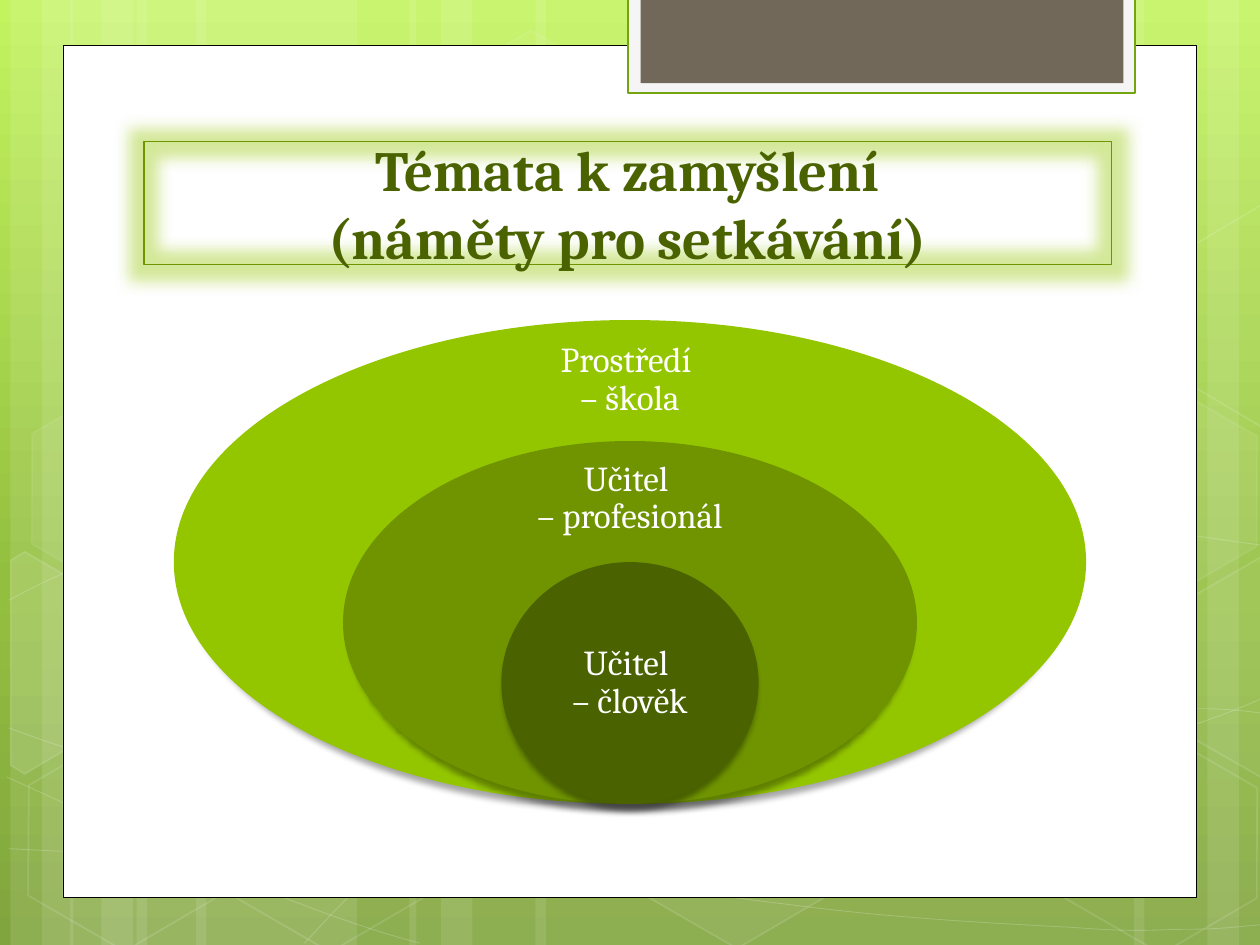
import math
from copy import deepcopy

from lxml import etree
from pptx import Presentation
from pptx.dml.color import RGBColor
from pptx.enum.shapes import MSO_SHAPE
from pptx.enum.text import MSO_ANCHOR, MSO_AUTO_SIZE, PP_ALIGN
from pptx.oxml.ns import qn
from pptx.util import Pt

RECT, HEXAGON = MSO_SHAPE.RECTANGLE, MSO_SHAPE.HEXAGON
MIDDLE, CENTER = MSO_ANCHOR.MIDDLE, PP_ALIGN.CENTER
NO_AUTOFIT = MSO_AUTO_SIZE.NONE

WHITE = RGBColor(0xFF, 0xFF, 0xFF)
BLACK = RGBColor(0x00, 0x00, 0x00)
LIME = RGBColor(0x94, 0xC6, 0x00)
GREEN = RGBColor(0x6F, 0x94, 0x00)
DARK_GREEN = RGBColor(0x4A, 0x63, 0x00)
TAB_EDGE = RGBColor(0x74, 0xA5, 0x10)
TAB_LIGHT = RGBColor(0xF5, 0xF5, 0xF5)
TAB_BROWN = RGBColor(0x71, 0x68, 0x5A)
BACKDROP = [
    (0, RGBColor(0xC3, 0xF3, 0x5F)),
    (0.62, RGBColor(0x93, 0xBF, 0x3F)),
    (1, RGBColor(0x81, 0xA5, 0x3E)),
]

FONT = "Cambria"
SLIDE_W, SLIDE_H = 720, 540
TILT = 30

# (left, width) of the pale vertical bands
BANDS = [(78, 126), (6, 36), (24, 60), (112, 126), (40, 36), (58, 60),
         (528, 126), (690, 36), (648, 60), (306, 222), (234, 36), (252, 60)]

# Start point, then two control points and an end point for each segment
CURVES = [
    [(5, 485), (44, 487), (83, 489), (137, 488), (191, 487), (258, 486), (330, 479),
     (402, 472), (504, 458), (570, 444), (636, 431), (703, 409), (725, 397)],
    [(5, 343), (26, 332), (47, 321), (87, 310), (128, 299), (186, 284), (250, 279),
     (314, 274), (392, 273), (471, 279), (550, 284), (682, 307), (725, 312)],
    [(4, 444), (91, 484), (178, 523), (240, 539)],
    [(5, 416), (27, 424), (50, 432), (92, 444), (134, 454), (197, 472), (257, 485),
     (317, 497), (392, 510), (452, 517), (512, 525), (576, 528), (614, 530),
     (652, 533), (662, 531), (680, 531), (699, 531), (712, 529), (725, 528)],
    [(174, 539), (187, 525), (200, 510), (217, 498), (235, 485), (259, 470), (279, 460),
     (300, 450), (312, 446), (338, 438), (364, 431), (413, 421), (438, 416),
     (464, 411), (467, 411), (490, 410), (512, 407), (547, 405), (572, 405),
     (597, 404), (638, 405), (638, 405), (654, 405), (670, 405), (686, 405),
     (699, 405), (711, 406), (724, 408)],
]

# (left, top, fill opacity or None, line opacity), in percent
HEXAGONS = [(240.5, 26, 4, 8), (358, 424, 6, 12), (8, 425.5, None, 12),
            (10, 224.5, 7, 8), (125.5, 426, None, 12), (542, 326, 10, 12),
            (600.5, 427, None, 12), (600.5, 226, 7, 8)]

# Hexagons cut by the slide edge: (fill opacity or None, centre, corners as seen)
CUT_HEXAGONS = [
    (10, (26, 385),
     [(6, 320), (14, 315), (69, 347), (68, 410), (14, 442), (6, 437)]),
    (4, (709, 374.5),
     [(667, 349), (721, 318), (726, 321), (726, 441), (721, 444), (667, 413)]),
    (None, (709, 173.5),
     [(667, 149), (721, 117), (727, 121), (726, 241), (721, 244), (667, 212)]),
]

# (text, width, height, fill, side inset, top inset, bottom inset)
LAYERS = [
    ("Prostředí \v– škola", 521.3, 276.5, LIME, 181, 25, 232.5),
    ("Učitel \v– profesionál", 328, 207.4, GREEN, 98.6, 24.5, 166),
    ("Učitel \v– člověk", 147, 138.2, DARK_GREEN, 32.4, 46, 46),
]
LAYERS_BOTTOM = 459.4


def set_alpha(sp, xpath, percent):
    clr = sp.element.spPr.xpath(xpath + "a:solidFill/a:srgbClr")[0]
    etree.SubElement(clr, qn("a:alpha")).set("val", str(percent * 1000))


def paint(sp, fill=None, line=None, width=1, fill_alpha=None, line_alpha=None):
    sp.shadow.inherit = False
    for part, color in ((sp.fill, fill), (sp.line.fill, line)):
        if color is None:
            part.background()
        else:
            part.solid()
            part.fore_color.rgb = color
    if line is not None:
        sp.line.width = Pt(width)
    if fill_alpha:
        set_alpha(sp, "", fill_alpha)
    if line_alpha:
        set_alpha(sp, "a:ln/", line_alpha)


def add_effect(sp, tag, color, alpha, **attrs):
    """Put a glow or shadow into the shape's (empty) effect list."""
    effects = sp.element.spPr.find(qn("a:effectLst"))
    effect = etree.SubElement(effects, qn(tag))
    for name, value in attrs.items():
        effect.set(name, str(value))
    clr = etree.SubElement(effect, qn("a:srgbClr"))
    clr.set("val", str(color))
    etree.SubElement(clr, qn("a:alpha")).set("val", str(alpha * 1000))


def add_block(s, shape, x, y, w, h, **look):
    sp = s.shapes.add_shape(shape, Pt(x), Pt(y), Pt(w), Pt(h))
    paint(sp, **look)
    return sp


def add_outline(s, points, close=True, **look):
    pts = [(Pt(x), Pt(y)) for x, y in points]
    builder = s.shapes.build_freeform(*pts[0])
    builder.add_line_segments(pts[1:], close=close)
    sp = builder.convert_to_shape()
    paint(sp, **look)
    return sp


def add_curve(s, nodes, **look):
    """Add an outline whose every three line segments become one Bézier curve."""
    sp = add_outline(s, nodes, close=False, **look)
    lines = sp.element.spPr.xpath(".//a:path/a:lnTo")
    for i in range(0, len(lines), 3):
        curve = etree.Element(qn("a:cubicBezTo"))
        lines[i].addprevious(curve)
        for line in lines[i:i + 3]:
            curve.append(line[0])
            line.getparent().remove(line)
    return sp


def ellipse_nodes(cx, cy, w, h):
    k = 4 / 3 * math.tan(math.pi / 8)
    unit = [(-1, 0), (-1, -k), (-k, -1), (0, -1), (k, -1), (1, -k), (1, 0),
            (1, k), (k, 1), (0, 1), (-k, 1), (-1, k), (-1, 0)]
    return [(cx + x * w / 2, cy + y * h / 2) for x, y in unit]


def turn_back(points, center):
    """Undo the tilt, so that the shape's own rotation brings it back."""
    cx, cy = center
    cos, sin = math.cos(math.radians(TILT)), math.sin(math.radians(TILT))
    return [(cx + (x - cx) * cos + (y - cy) * sin,
             cy - (x - cx) * sin + (y - cy) * cos) for x, y in points]


def write_text(sp, text, color, size, bold=False, spacing=1.0, **insets):
    tf = sp.text_frame
    tf.text = text
    settings = dict(word_wrap=True, auto_size=NO_AUTOFIT, vertical_anchor=MIDDLE)
    for name, value in settings.items():
        setattr(tf, name, value)
    for side, value in insets.items():
        setattr(tf, "margin_" + side, Pt(value))
    p = tf.paragraphs[0]
    p.alignment, p.line_spacing = CENTER, spacing
    for r in p.runs:
        for name, value in dict(name=FONT, size=Pt(size), bold=bold).items():
            setattr(r.font, name, value)
        r.font.color.rgb = color
    # Line breaks take the run format so that they keep the line height
    for br in p._p.findall(qn("a:br")):
        br.append(deepcopy(p._p.find(qn("a:r")).find(qn("a:rPr"))))


def set_backdrop(s):
    fill = s.background.fill
    fill.gradient()
    fill.gradient_angle = 270
    stops = s.element.xpath(".//p:bgPr//a:gsLst")[0]
    stops.insert(1, deepcopy(stops[0]))
    for stop, (position, color) in zip(fill.gradient_stops, BACKDROP):
        stop.position = position
        stop.color.rgb = color


def add_pattern(s):
    for x, w in BANDS:
        add_block(s, RECT, x, 0, w, SLIDE_H, fill=WHITE, fill_alpha=10)
    for nodes in CURVES:
        add_curve(s, nodes, line=WHITE, width=0.5, line_alpha=20)
    for x, y, fill_alpha, line_alpha in HEXAGONS:
        sp = add_block(s, HEXAGON, x, y, 126, 109.5, fill=WHITE if fill_alpha else None,
                       line=WHITE, fill_alpha=fill_alpha, line_alpha=line_alpha)
        sp.rotation = TILT
        sp.adjustments[0], sp.adjustments[1] = 0.285, 1.155
    for fill_alpha, center, corners in CUT_HEXAGONS:
        sp = add_outline(s, turn_back(corners, center), fill=WHITE if fill_alpha else None,
                         line=WHITE, fill_alpha=fill_alpha, line_alpha=12)
        sp.rotation = TILT


def add_panel(s):
    add_block(s, RECT, 36, 26, 648, 487, fill=WHITE, line=BLACK, width=0.5)
    add_block(s, RECT, 359, -1.5, 289.5, 54.5, fill=TAB_LIGHT, line=TAB_EDGE, width=1.25)
    add_block(s, RECT, 366, -1.5, 276, 49, fill=TAB_BROWN)


def add_title(s, text):
    title = s.shapes.title
    s.shapes.element.append(title.element)  # bring to front
    for name, value in dict(left=82.2, top=81, width=553, height=70).items():
        setattr(title, name, Pt(value))
    paint(title, line=GREEN, width=0.75)
    add_effect(title, "a:glow", LIME, 40, rad=Pt(18))
    write_text(title, text, DARK_GREEN, 32.4, bold=True)


def add_layer(s, text, w, h, color, side, top, bottom):
    """Add one nested ellipse; all of them share the same lowest point."""
    sp = add_curve(s, ellipse_nodes(SLIDE_W / 2, LAYERS_BOTTOM - h / 2, w, h), fill=color)
    add_effect(sp, "a:outerShdw", BLACK, 34, blurRad=Pt(3.5), dist=Pt(4),
               dir=5400000, sx=98000, algn="ctr", rotWithShape=0)
    write_text(sp, text, WHITE, 20, spacing=0.9,
               left=side, right=side, top=top, bottom=bottom)


def main():
    prs = Presentation()
    prs.slide_width, prs.slide_height = Pt(SLIDE_W), Pt(SLIDE_H)
    s = prs.slides.add_slide(prs.slide_layouts[5])
    set_backdrop(s)
    add_pattern(s)
    add_panel(s)
    add_title(s, "Témata k zamyšlení\v(náměty pro setkávání)")
    for layer in LAYERS:
        add_layer(s, *layer)
    prs.save("out.pptx")


if __name__ == "__main__":
    main()
